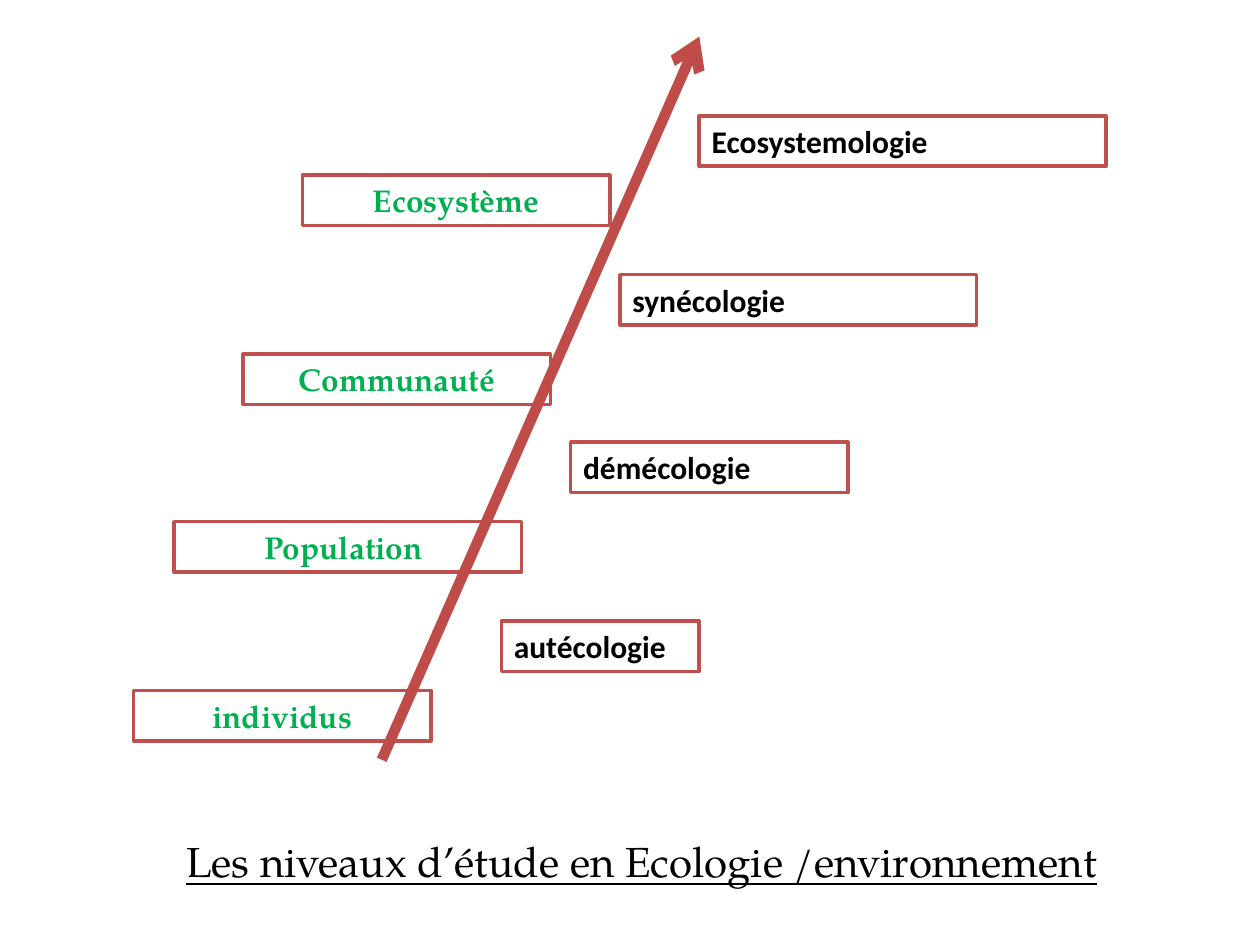
from typing import NamedTuple

from lxml import etree
from pptx import Presentation
from pptx.dml.color import RGBColor
from pptx.enum import shapes, text
from pptx.oxml import ns
from pptx.util import Inches, Pt

SLIDE_WIDTH, SLIDE_HEIGHT = 10, 7.5
BOX_HEIGHT = 5.33
SERIF, SANS = "TeX Gyre Pagella", "Calibri"
WHITE, BLACK, GREEN = "FFFFFF", "000000", "00B050"
BORDER_RED, ARROW_RED = "C0504D", "BF4C48"


class Label(NamedTuple):
    wording: str
    left: float
    top: float
    width: float


class Style(NamedTuple):
    font: str
    size: int
    color: str
    alignment: text.PP_ALIGN = text.PP_ALIGN.LEFT
    bold: bool = False
    underline: bool = False


LEVEL_STYLE = Style(SERIF, 18, GREEN, text.PP_ALIGN.CENTER, bold=True)
BRANCH_STYLE = Style(SANS, 18, BLACK, bold=True)
TITLE_STYLE = Style(SERIF, 24, BLACK, underline=True)

LEVELS = [
    Label("Ecosystème", 24, 18.53, 24.4),
    Label("Communauté", 19.3, 37.47, 24.4),
    Label("Population ", 13.8, 55.2, 27.6),
    Label("individus", 10.6, 73.07, 23.6),
]
BRANCHES = [
    Label("Ecosystemologie", 55.5, 12.27, 32.3),
    Label("synécologie", 49.2, 29.07, 28.3),
    Label("démécologie", 45.3, 46.8, 22),
    Label("autécologie", 39.8, 65.73, 15.7),
]
TITLE = Label("Les niveaux d’étude en Ecologie /environnement", 13.8, 87.73, 78)


def color(value: str) -> RGBColor:
    return RGBColor.from_string(value)


def across(percent: float) -> int:
    return Inches(SLIDE_WIDTH * percent / 100)


def down(percent: float) -> int:
    return Inches(SLIDE_HEIGHT * percent / 100)


def write(shape, wording: str, style: Style) -> None:
    frame = shape.text_frame
    frame.word_wrap = True
    frame.auto_size = text.MSO_AUTO_SIZE.SHAPE_TO_FIT_TEXT
    frame.vertical_anchor = text.MSO_ANCHOR.TOP
    paragraph = frame.paragraphs[0]
    paragraph.alignment = style.alignment
    run = paragraph.add_run()
    run.text = wording
    run.font.name = style.font
    run.font.size = Pt(style.size)
    run.font.bold = style.bold
    run.font.underline = style.underline
    run.font.color.rgb = color(style.color)


def draw_box(slide, label: Label, style: Style) -> None:
    shape = slide.shapes.add_shape(
        shapes.MSO_SHAPE.RECTANGLE,
        across(label.left), down(label.top), across(label.width), down(BOX_HEIGHT),
    )
    shape.shadow.inherit = False
    shape.fill.solid()
    shape.fill.fore_color.rgb = color(WHITE)
    shape.line.color.rgb = color(BORDER_RED)
    shape.line.width = Pt(2)
    write(shape, label.wording, style)


def draw_arrow(slide, start: tuple[float, float], end: tuple[float, float]) -> None:
    arrow = slide.shapes.add_connector(
        shapes.MSO_CONNECTOR.STRAIGHT,
        across(start[0]), down(start[1]), across(end[0]), down(end[1]),
    )
    arrow.line.color.rgb = color(ARROW_RED)
    arrow.line.width = Pt(6)
    etree.SubElement(arrow.line._get_or_add_ln(), ns.qn("a:tailEnd"), type="arrow")
    etree.SubElement(arrow._element.spPr, ns.qn("a:effectLst"))


def draw_title(slide, label: Label) -> None:
    shape = slide.shapes.add_textbox(
        across(label.left), down(label.top), across(label.width), down(6.67)
    )
    write(shape, label.wording, TITLE_STYLE)


def main() -> None:
    presentation = Presentation()
    presentation.slide_width = Inches(SLIDE_WIDTH)
    presentation.slide_height = Inches(SLIDE_HEIGHT)
    slide = presentation.slides.add_slide(presentation.slide_layouts[6])
    for labels, style in ((LEVELS, LEVEL_STYLE), (BRANCHES, BRANCH_STYLE)):
        for label in labels:
            draw_box(slide, label, style)
    draw_arrow(slide, (30.3, 80.4), (55.5, 3.87))
    draw_title(slide, TITLE)
    presentation.save("out.pptx")


if __name__ == "__main__":
    main()
